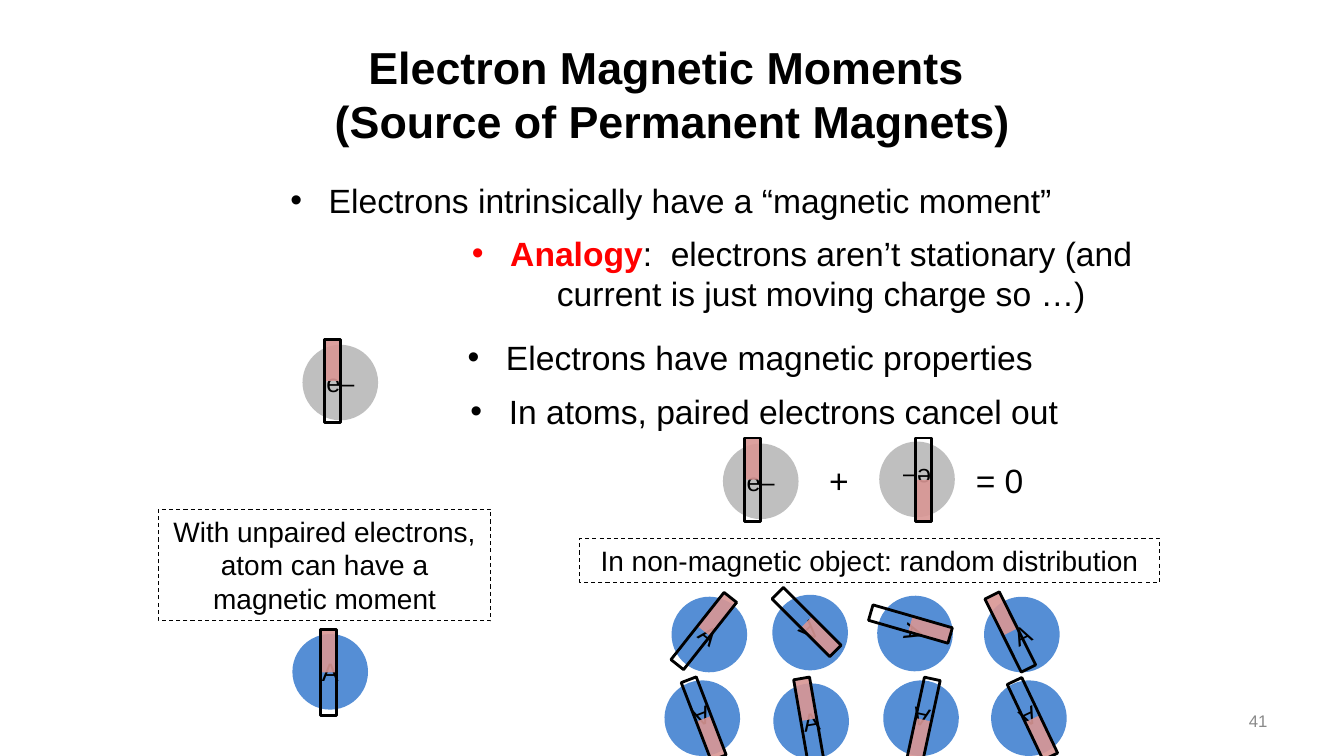
from dataclasses import dataclass
from math import cos, radians, sin

from lxml.etree import SubElement
from pptx import Presentation
from pptx.dml.color import RGBColor
from pptx.enum.dml import MSO_LINE
from pptx.enum.shapes import MSO_SHAPE as SHAPE
from pptx.enum.text import MSO_ANCHOR as ANCHOR, MSO_AUTO_SIZE as FIT, PP_ALIGN as ALIGN
from pptx.oxml.ns import qn
from pptx.util import Emu, Pt

PX = 9144
FONT = "Arial"
COLORS = {
    "text": "000000",
    "accent": "FF0000",
    "electron": "BFBFBF",
    "atom": "558ED5",
    "pole": "D99694",
    "number": "898989",
}
DISC = 75
BAR = 16


@dataclass
class Magnet:
    kind: str
    x: int
    y: int
    bar_x: int
    bar_y: int
    length: int
    angle: float


@dataclass
class Label:
    box: tuple[int, int, int, int]
    text: str
    align: ALIGN = ALIGN.CENTER
    bullet: bool = False
    lead: str = ""


SYMBOLS = {"electron": "e–", "atom": "A"}

MAGNETS = [
    Magnet("electron", 300, 342, 330, 378, 83, 90),
    Magnet("electron", 717, 440, 746, 476, 83, 90),
    Magnet("electron", 872, 438, 916, 476, 83, 270),
    Magnet("atom", 290, 629, 326, 667, 85, 90),
    Magnet("atom", 666, 592, 698, 626, 85, 128.3),
    Magnet("atom", 766, 590, 800, 617, 81, 225),
    Magnet("atom", 870, 591, 903, 619, 82, 196.1),
    Magnet("atom", 976, 592, 1002, 627, 81, 63.5),
    Magnet("atom", 659, 675, 698, 713, 83, 249),
    Magnet("atom", 767, 678, 802, 714, 83, 80.2),
    Magnet("atom", 876, 675, 916, 714, 83, 282.2),
    Magnet("atom", 983, 675, 1024, 713, 83, 244.6),
]

LABELS = [
    Label((458, 226, 675, 91),
          ":  electrons aren’t stationary (and current is just moving charge so …)",
          bullet=True, lead="Analogy"),
    Label((454, 329, 621, 50), "Electrons have magnetic properties", ALIGN.LEFT, True),
    Label((431, 383, 654, 50), "In atoms, paired electrons cancel out", bullet=True),
    Label((803, 451, 58, 50), "+"),
    Label((958, 451, 75, 50), "= 0", ALIGN.LEFT),
]

CAPTIONS = [
    Label((575, 534, 575, 44), "In non-magnetic object: random distribution"),
    Label((157, 505, 330, 111), "With unpaired electrons, atom can have a magnetic moment"),
]


def px(*values: float) -> list[Emu]:
    return [Emu(round(v * PX)) for v in values]


def rgb(name: str) -> RGBColor:
    return RGBColor.from_string(COLORS[name])


def place(sp, box: tuple[int, int, int, int]) -> None:
    sp.left, sp.top, sp.width, sp.height = px(*box)


def add_bullet(p) -> None:
    pPr = p._p.get_or_add_pPr()
    pPr.set("marL", str(38 * PX))
    pPr.set("indent", str(-38 * PX))
    SubElement(pPr, qn("a:buFont")).set("typeface", FONT)
    SubElement(pPr, qn("a:buChar")).set("char", "•")


def write(sp, text: str, *, size: int = 24, color: str = "text", bold: bool = False,
          align: ALIGN = ALIGN.CENTER, anchor: ANCHOR = ANCHOR.TOP,
          bullet: bool = False, lead: str = "") -> None:
    tf = sp.text_frame
    tf.word_wrap = True
    tf.auto_size = FIT.NONE
    tf.vertical_anchor = anchor
    p = tf.paragraphs[0]
    p.text = text
    p.alignment = align
    p.space_before = Pt(0)
    if lead:
        p.clear()
        r = p.add_run()
        r.text = lead
        r.font.size, r.font.name, r.font.bold = Pt(size), FONT, True
        r.font.color.rgb = rgb("accent")
        p.add_run().text = text
    for r in p.runs[1 if lead else 0:]:
        r.font.size, r.font.name, r.font.bold = Pt(size), FONT, bold
        r.font.color.rgb = rgb(color)
    if bullet:
        add_bullet(p)


def add_shape(shapes, kind: SHAPE, box: tuple, *, fill: str = "", line: float = 0,
              angle: float = 0):
    sp = shapes.add_shape(kind, *px(*box))
    sp.shadow.inherit = False
    sp.rotation = angle
    if fill:
        sp.fill.solid()
        sp.fill.fore_color.rgb = rgb(fill)
    else:
        sp.fill.background()
    if line:
        sp.line.width = Pt(line)
        sp.line.color.rgb = rgb("text")
    else:
        sp.line.fill.background()
    return sp


def add_bar(shapes, cx: float, cy: float, length: float, angle: float, **style):
    box = (cx - length / 2, cy - BAR / 2, length, BAR)
    return add_shape(shapes, SHAPE.RECTANGLE, box, angle=angle, **style)


def add_magnet(shapes, m: Magnet) -> None:
    disc = add_shape(shapes, SHAPE.OVAL, (m.x, m.y, DISC, DISC), fill=m.kind,
                     angle=(m.angle - 90) % 360)
    write(disc, SYMBOLS[m.kind], size=18, anchor=ANCHOR.MIDDLE)
    shift, turn = m.length / 4, radians(m.angle)
    pole = add_bar(shapes, m.bar_x - shift * cos(turn), m.bar_y - shift * sin(turn),
                   m.length / 2, m.angle, fill="pole")
    clr = pole._element.spPr.find(qn("a:solidFill"))[0]
    SubElement(clr, qn("a:alpha")).set("val", "90000")
    add_bar(shapes, m.bar_x, m.bar_y, m.length, m.angle, line=2)


def add_label(shapes, label: Label) -> None:
    sp = shapes.add_textbox(*px(*label.box))
    write(sp, label.text, align=label.align, bullet=label.bullet, lead=label.lead)


def add_caption(shapes, caption: Label) -> None:
    sp = add_shape(shapes, SHAPE.RECTANGLE, caption.box, line=0.75)
    sp.line.dash_style = MSO_LINE.DASH
    write(sp, caption.text, size=20)


def main() -> None:
    prs = Presentation()
    prs.slide_width, prs.slide_height = px(1333, 750)
    slide = prs.slides.add_slide(prs.slide_layouts[1])
    shapes = slide.shapes

    title, body = slide.placeholders
    place(title, (67, 30, 1200, 125))
    write(title, "Electron Magnetic Moments \v(Source of Permanent Magnets)",
          size=32, bold=True, anchor=ANCHOR.MIDDLE)
    place(body, (274, 173, 783, 51))
    write(body, "Electrons intrinsically have a “magnetic moment”", bullet=True)

    for caption in CAPTIONS:
        add_caption(shapes, caption)
    for magnet in MAGNETS:
        add_magnet(shapes, magnet)
    for label in LABELS:
        add_label(shapes, label)

    number = shapes.add_textbox(*px(956, 695, 311, 40))
    write(number, "41", size=12, color="number", align=ALIGN.RIGHT, anchor=ANCHOR.MIDDLE)
    prs.save("out.pptx")


if __name__ == "__main__":
    main()
